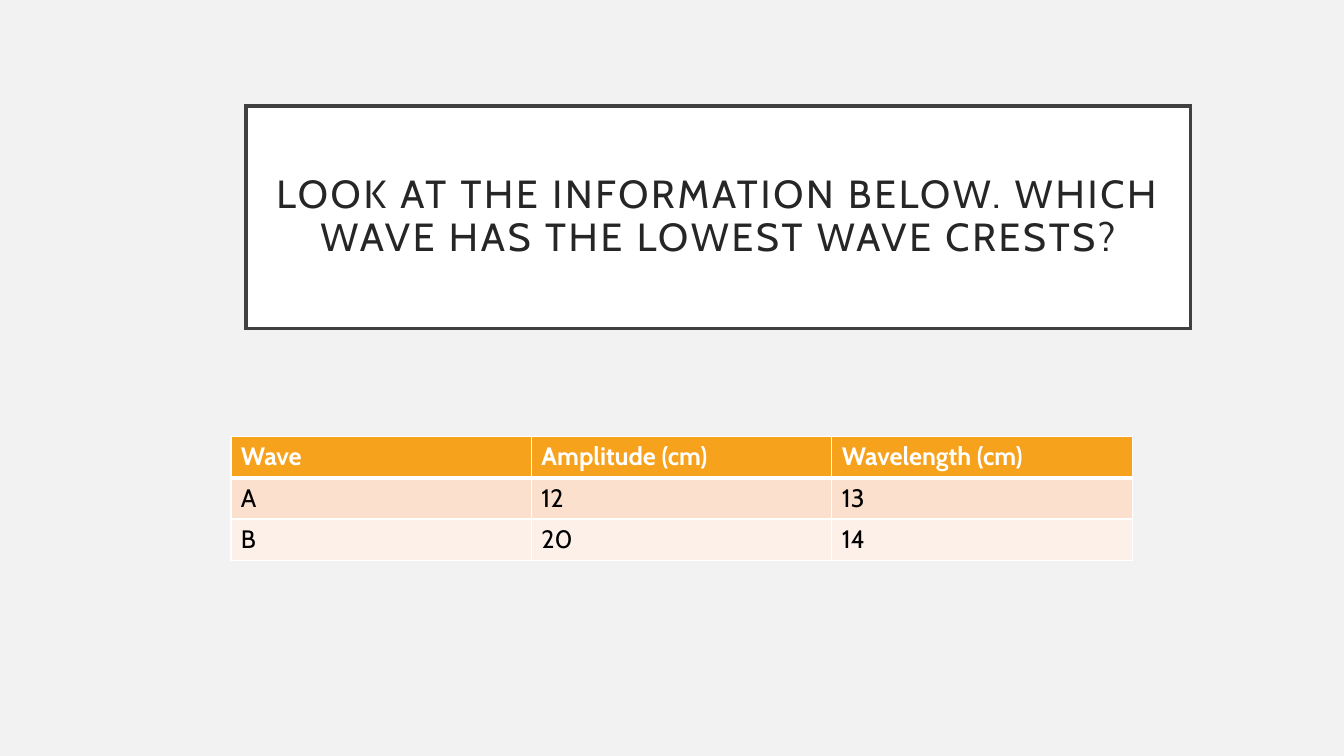
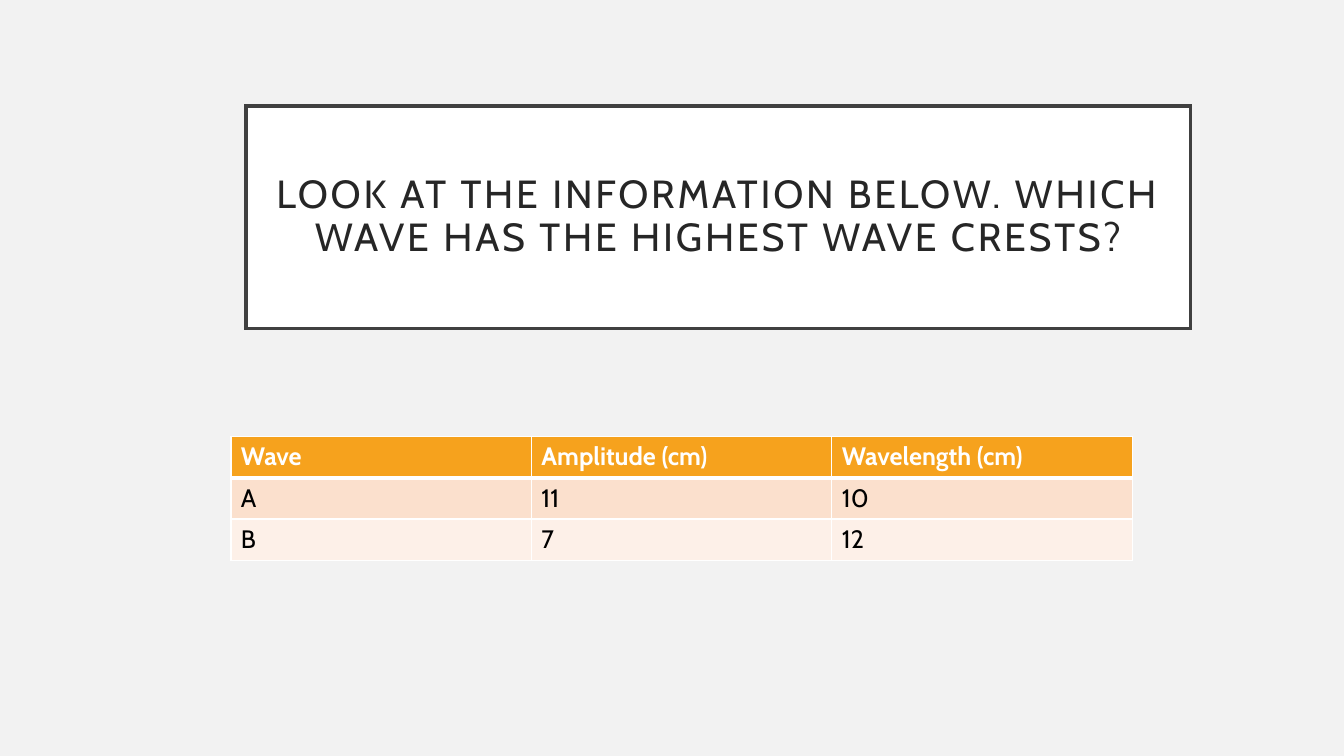
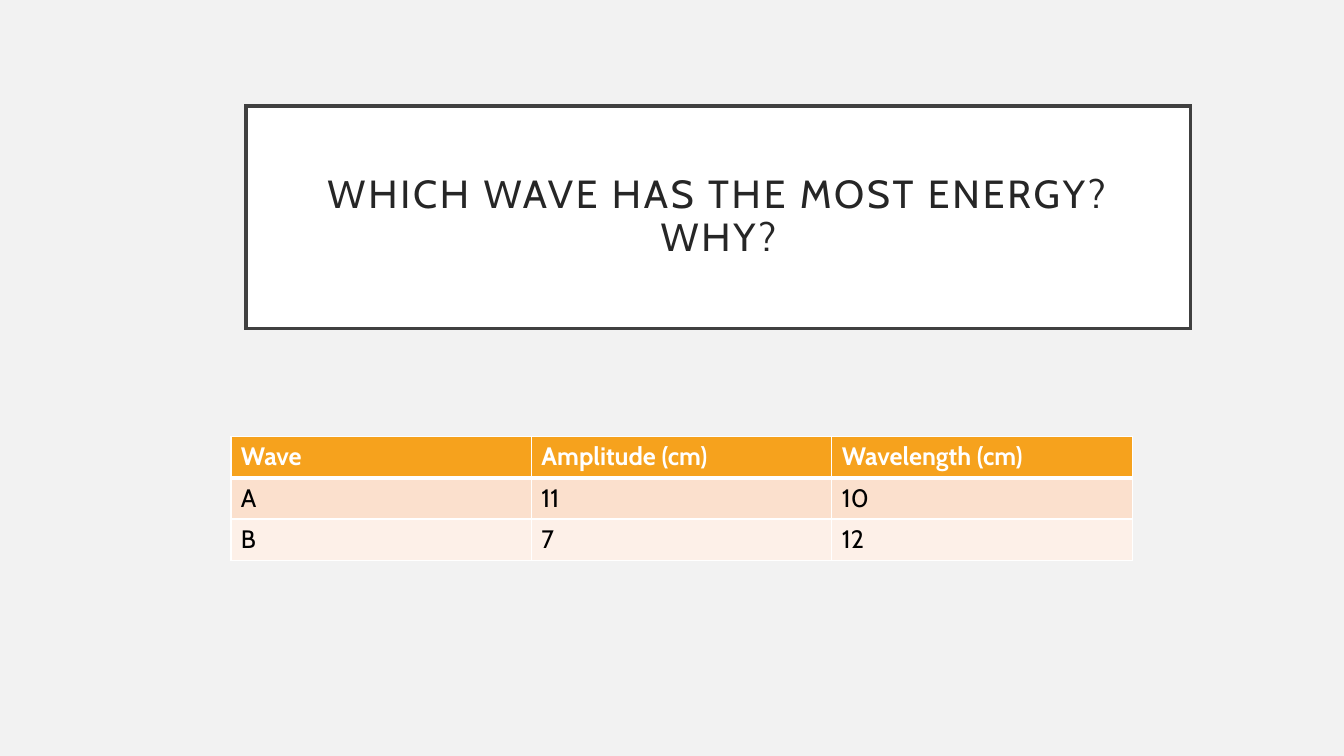
from dataclasses import dataclass

from lxml import etree
from pptx import Presentation
from pptx import util as u
from pptx.dml.color import RGBColor
from pptx.enum import text as t
from pptx.oxml import ns

FONT = "Cabin"
HUES = {
    "page": "F2F2F2", "white": "FFFFFF", "frame": "404040", "title": "262626",
    "head": "F6A21D", "odd": "FBE0CD", "even": "FDF0E8", "black": "000000",
}
HEADS = ("Wave", "Amplitude (cm)", "Wavelength (cm)")
COL, ROW = 2.98, 0.41  # table cell size in inches
THIN, THICK = 1, 3  # rule widths in points


@dataclass(frozen=True)
class Quiz:
    ask: str
    rows: tuple[tuple[str, ...], ...]


FIRST = (("A", "12", "13"), ("B", "20", "14"))
NEXT = (("A", "11", "10"), ("B", "7", "12"))
DECK = (
    Quiz("LOOK AT THE INFORMATION BELOW. WHICH WAVE HAS THE LOWEST WAVE CRESTS?", FIRST),
    Quiz("LOOK AT THE INFORMATION BELOW. WHICH WAVE HAS THE HIGHEST WAVE CRESTS?", NEXT),
    Quiz("WHICH WAVE HAS THE MOST ENERGY? WHY?", NEXT),
)


def hue(name: str) -> RGBColor:
    return RGBColor.from_string(HUES[name])


def paint(fill, name: str) -> None:
    fill.solid()
    fill.fore_color.rgb = hue(name)


def write(para, words: str, size: int, name: str, bold: bool = False):
    run = para.add_run()
    run.text = words
    font = run.font
    font.name, font.size, font.bold = FONT, u.Pt(size), bold
    font.color.rgb = hue(name)
    return run


def edge(cell, sides: dict[str, int]) -> None:
    """Rule the cell's sides; the lines must come before its fill."""
    props = cell._tc.get_or_add_tcPr()
    for spot, (side, width) in enumerate(sides.items()):
        line = etree.Element(ns.qn(f"a:ln{side}"), w=str(u.Pt(width)))
        fill = etree.SubElement(line, ns.qn("a:solidFill"))
        etree.SubElement(fill, ns.qn("a:srgbClr"), val=HUES["white"])
        props.insert(spot, line)


# Framed question
def add_title(slide, words: str) -> None:
    box = slide.shapes.title
    box.left, box.top = u.Inches(2.44), u.Inches(1.05)
    box.width, box.height = u.Inches(9.37), u.Inches(2.21)
    paint(box.fill, "white")
    box.line.color.rgb = hue("frame")
    box.line.width = u.Pt(2.5)
    etree.SubElement(box.line._get_or_add_ln(), ns.qn("a:miter"), lim="800000")

    frame = box.text_frame
    frame.word_wrap = True
    frame.auto_size = t.MSO_AUTO_SIZE.NONE
    frame.vertical_anchor = t.MSO_ANCHOR.MIDDLE
    frame.margin_left = frame.margin_right = u.Inches(0.2)
    frame.margin_top = frame.margin_bottom = u.Inches(0.2)
    para = frame.paragraphs[0]
    para.alignment = t.PP_ALIGN.CENTER
    para.line_spacing = 0.9
    run = write(para, words, 28, "title")
    run.font._element.set("spc", "200")


# Table of wave data
def add_grid(slide, rows: tuple[tuple[str, ...], ...]) -> None:
    data = (HEADS, *rows)
    grid = slide.shapes.add_table(
        len(data), len(HEADS), u.Inches(2.29), u.Inches(4.33),
        u.Inches(COL * len(HEADS)), u.Inches(ROW * len(data))).table
    for y, line in enumerate(data):
        grid.rows[y].height = u.Inches(ROW)
        head = y == 0
        tint = "head" if head else "odd" if y % 2 else "even"
        for x, words in enumerate(line):
            cell = grid.cell(y, x)
            paint(cell.fill, tint)
            edge(cell, {"L": THIN, "R": THIN,
                        "T": THICK if y == 1 else THIN,
                        "B": THICK if head else THIN})
            write(cell.text_frame.paragraphs[0], words, 18,
                  "white" if head else "black", head)


def main() -> None:
    prs = Presentation()
    prs.slide_width, prs.slide_height = u.Inches(13.33), u.Inches(7.5)
    paint(prs.slide_master.background.fill, "page")
    plain = prs.slide_layouts.get_by_name("Title Only")
    for quiz in DECK:
        slide = prs.slides.add_slide(plain)
        add_title(slide, quiz.ask)
        add_grid(slide, quiz.rows)
    prs.save("out.pptx")


if __name__ == "__main__":
    main()
